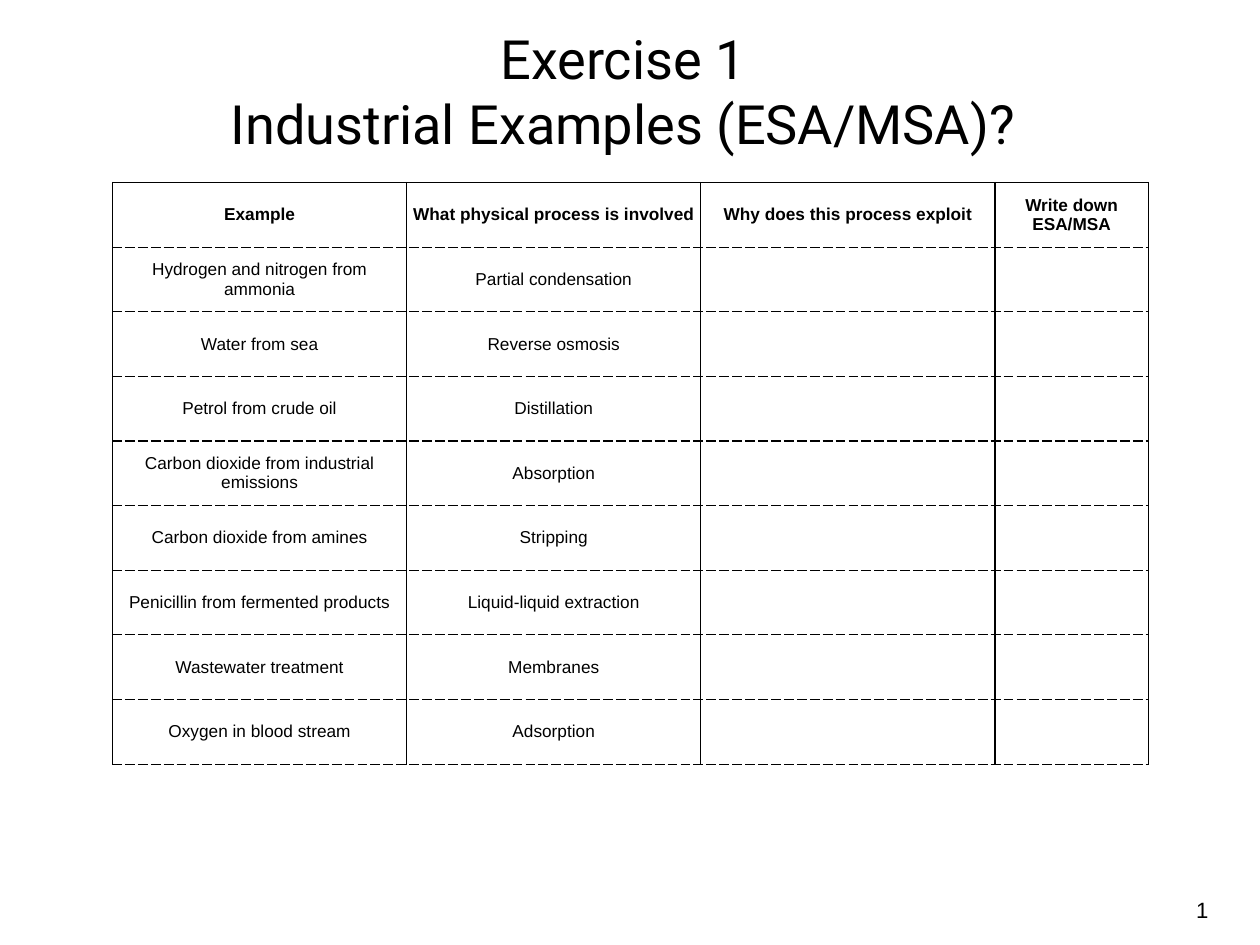
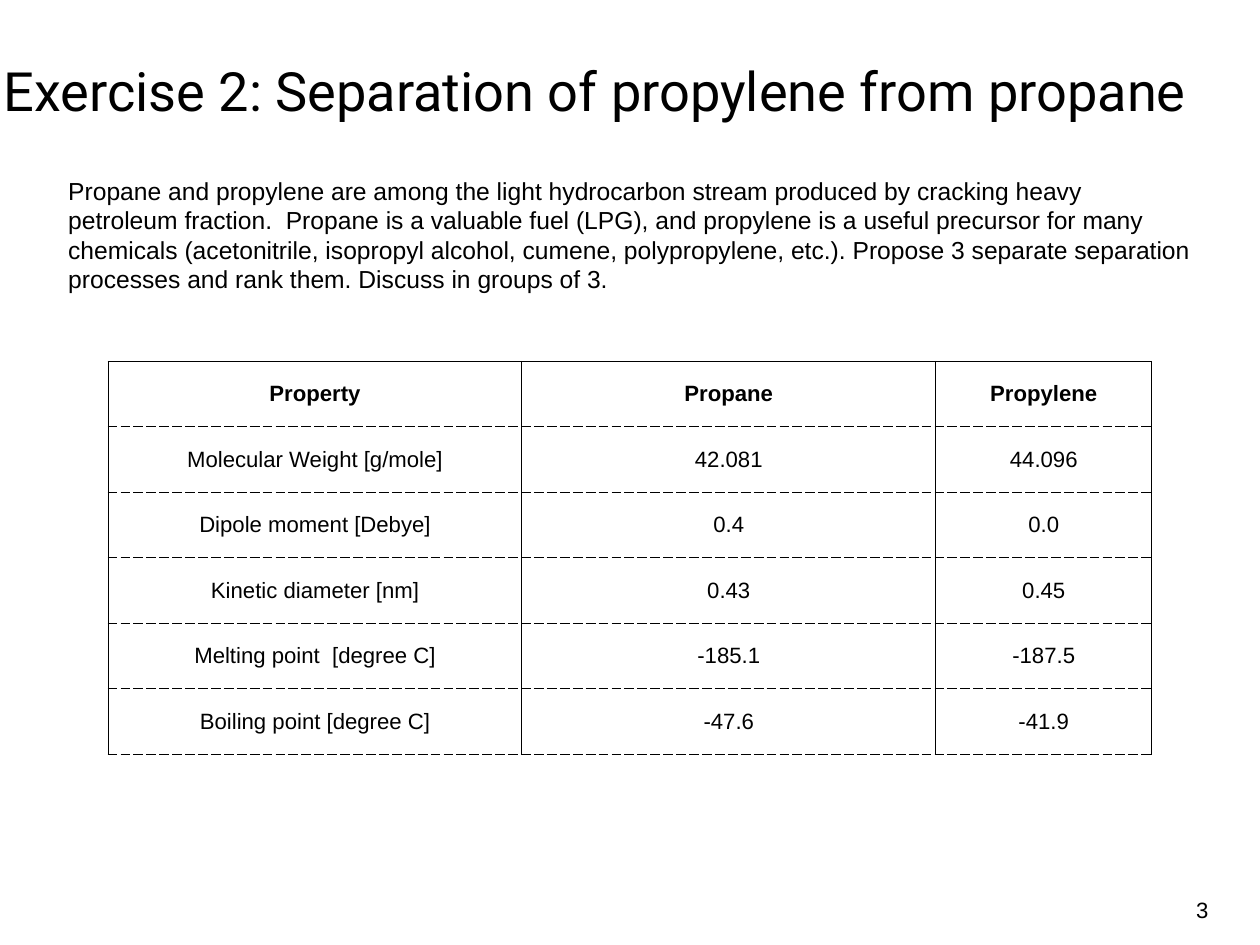
"""Build two separation exercise slides, each with a title and a ruled table."""
from dataclasses import dataclass

from lxml import etree
from pptx import Presentation
from pptx import util as u
from pptx.dml.color import RGBColor
from pptx.enum import text
from pptx.oxml import ns


@dataclass(frozen=True)
class Theme:
    ink: str = "000000"
    head: str = "Roboto"
    body: str = "Arial"
    title: int = 44
    lead: int = 20
    page: int = 18
    small: int = 14
    inset: float = 0.06
    rule: float = 1


LOOK = Theme()
ALIGN = text.PP_ALIGN
MIDDLE = text.MSO_ANCHOR.MIDDLE

CASES = [
    ["Example", "What physical process is involved",
     "Why does this process exploit", "Write down ESA/MSA"],
    ["Hydrogen and nitrogen from ammonia", "Partial condensation", "", ""],
    ["Water from sea", "Reverse osmosis", "", ""],
    ["Petrol from crude oil", "Distillation", "", ""],
    ["Carbon dioxide from industrial emissions", "Absorption", "", ""],
    ["Carbon dioxide from amines", "Stripping", "", ""],
    ["Penicillin from fermented products", "Liquid-liquid extraction", "", ""],
    ["Wastewater treatment", "Membranes", "", ""],
    ["Oxygen in blood stream", "Adsorption", "", ""],
]

TRAITS = [
    ["Property", "Propane", "Propylene"],
    ["Molecular Weight [g/mole]", "42.081", "44.096"],
    ["Dipole moment [Debye]", "0.4", "0.0"],
    ["Kinetic diameter [nm]", "0.43", "0.45"],
    ["Melting point  [degree C]", "-185.1", "-187.5"],
    ["Boiling point [degree C]", "-47.6", "-41.9"],
]

TASK = (
    "Propane and propylene are among the light hydrocarbon stream produced by "
    "cracking heavy petroleum fraction.  Propane is a valuable fuel (LPG), and "
    "propylene is a useful precursor for many chemicals (acetonitrile, isopropyl "
    "alcohol, cumene, polypropylene, etc.). Propose 3 separate separation "
    "processes and rank them. Discuss in groups of 3."
)


def pad(item):
    """Give a cell or text frame the common inner margins."""
    for side in ("left", "top", "right", "bottom"):
        setattr(item, f"margin_{side}", u.Inches(LOOK.inset))


def write(para, words, size, face=LOOK.body, align=ALIGN.CENTER, bold=False):
    """Add one styled run to a paragraph."""
    para.alignment = align
    run = para.add_run()
    run.text = words
    font = run.font
    font.name, font.size, font.bold = face, u.Pt(size), bold
    font.color.rgb = RGBColor.from_string(LOOK.ink)


def add_text(slide, box, lines, size, anchor=MIDDLE, **style):
    """Add a text box with one paragraph for each line."""
    frame = slide.shapes.add_textbox(*map(u.Inches, box)).text_frame
    frame.word_wrap = True
    frame.vertical_anchor = anchor
    pad(frame)
    for i, line in enumerate(lines):
        para = frame.add_paragraph() if i else frame.paragraphs[0]
        write(para, line, size, **style)


def add_title(slide, box, lines, align=ALIGN.CENTER):
    """Add the slide title."""
    add_text(slide, box, lines, LOOK.title, face=LOOK.head, align=align)


def add_page(slide, number):
    """Add the page number at the lower right."""
    add_text(slide, (13.37, 10.06, 0.4, 0.42), [str(number)], LOOK.page,
             anchor=text.MSO_ANCHOR.TOP)


def rule(cell, top):
    """Draw solid sides and dashed row lines, with a solid edge on top."""
    props = cell._tc.get_or_add_tcPr()
    dashes = {"L": "solid", "R": "solid", "T": "solid" if top else "lgDash",
              "B": "lgDash"}
    for side, dash in dashes.items():
        line = etree.SubElement(props, ns.qn(f"a:ln{side}"),
                                w=str(u.Pt(LOOK.rule)))
        fill = etree.SubElement(line, ns.qn("a:solidFill"))
        etree.SubElement(fill, ns.qn("a:srgbClr"), val=LOOK.ink)
        etree.SubElement(line, ns.qn("a:prstDash"), val=dash)


def add_grid(slide, left, top, cols, high, rows, size):
    """Add a ruled table with a bold first row."""
    box = (left, top, sum(cols), high * len(rows))
    grid = slide.shapes.add_table(len(rows), len(cols),
                                  *map(u.Inches, box)).table
    grid.first_row = grid.horz_banding = False
    for col, wide in zip(grid.columns, cols):
        col.width = u.Inches(wide)
    for r, row in enumerate(rows):
        grid.rows[r].height = u.Inches(high)
        for c, words in enumerate(row):
            cell = grid.cell(r, c)
            pad(cell)
            cell.vertical_anchor = MIDDLE
            rule(cell, r == 0)
            cell.fill.background()
            if words:
                write(cell.text_frame.paragraphs[0], words, size, bold=r == 0)


def add_cases(deck):
    """Build the slide of industrial examples."""
    slide = deck.slides.add_slide(deck.slide_layouts[6])
    add_title(slide, (2.4, 0.22, 9.27, 1.59),
              ["Exercise 1", "Industrial Examples (ESA/MSA)?"])
    add_grid(slide, 1.27, 2.06, [3.32] * 3 + [1.73], 0.73, CASES, LOOK.small)
    add_page(slide, 1)


def add_traits(deck):
    """Build the slide on propylene and propane."""
    slide = deck.slides.add_slide(deck.slide_layouts[6])
    add_title(slide, (-0.02, 0.6, 14.12, 0.84),
              ["Exercise 2: Separation of propylene from propane"],
              align=ALIGN.LEFT)
    add_text(slide, (0.71, 1.93, 12.8, 1.44), [TASK], LOOK.lead,
             align=ALIGN.LEFT)
    add_grid(slide, 1.22, 4.08, [4.67, 4.67, 2.44], 0.74, TRAITS, LOOK.page)
    add_page(slide, 3)


def main():
    """Build and save the deck."""
    deck = Presentation()
    deck.slide_width, deck.slide_height = u.Inches(14.22), u.Inches(10.67)
    add_cases(deck)
    add_traits(deck)
    deck.save("out.pptx")


if __name__ == "__main__":
    main()
